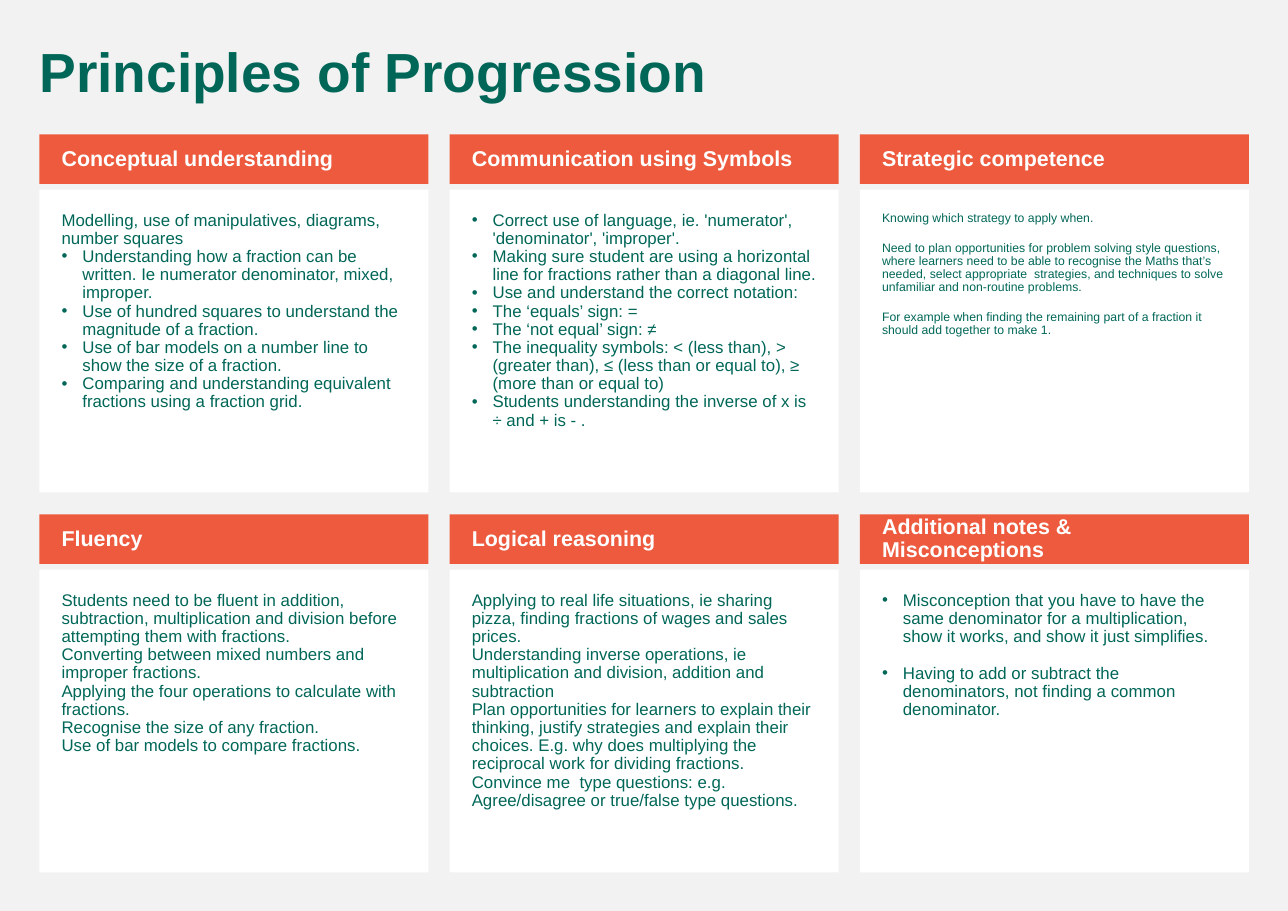
from lxml import etree
from pptx import Presentation
from pptx.dml.color import RGBColor
from pptx.enum.shapes import MSO_SHAPE as Shape
from pptx.enum.text import MSO_ANCHOR as Anchor, PP_ALIGN as Align
from pptx.oxml.ns import qn
from pptx.util import Cm, Pt

GREEN, ORANGE, WHITE, GREY = "006758", "ED5A3E", "FFFFFF", "F2F2F2"
LEFT, TOP = 0.91, 3.1
COLUMN_STEP, ROW_STEP = 9.46, 8.76
PANEL_WIDTH, HEADING_HEIGHT, BODY_HEIGHT, BODY_OFFSET = 8.97, 1.14, 6.98, 1.27
HEADING_INSETS = (0.51, 0.13, 0.25, 0.13)
BODY_INSETS = (0.51, 0.51, 0.51, 0.51)

# A line that starts with "• " becomes a bullet.
PANELS = [
    ("Conceptual understanding", {}, [
        "Modelling, use of manipulatives, diagrams, number squares",
        "• Understanding how a fraction can be written. Ie numerator denominator, mixed, improper.",
        "• Use of hundred squares to understand the magnitude of a fraction.",
        "• Use of bar models on a number line to show the size of a fraction.",
        "• Comparing and understanding equivalent fractions using a fraction grid.",
    ]),
    ("Communication using Symbols", {}, [
        "• Correct use of language, ie. 'numerator', 'denominator', 'improper'.",
        "• Making sure student are using a horizontal line for fractions rather than a diagonal line.",
        "• Use and understand the correct notation:",
        "• The ‘equals’ sign: =",
        "• The ‘not equal’ sign: ≠",
        "• The inequality symbols: < (less than), > (greater than), "
        "≤ (less than or equal to), ≥ (more than or equal to)",
        "• Students understanding the inverse of x is ÷ and + is - .",
    ]),
    ("Strategic competence", {"size": 8, "before": 11}, [
        "Knowing which strategy to apply when.",
        "Need to plan opportunities for problem solving style questions, where learners need "
        "to be able to recognise the Maths that’s needed, select appropriate  strategies, "
        "and techniques to solve unfamiliar and non-routine problems.",
        "For example when finding the remaining part of a fraction it should add together to make 1.",
    ]),
    ("Fluency", {}, [
        "Students need to be fluent in addition, subtraction, multiplication and division "
        "before attempting them with fractions.",
        "Converting between mixed numbers and improper fractions.",
        "Applying the four operations to calculate with fractions.",
        "Recognise the size of any fraction.",
        "Use of bar models to compare fractions.",
    ]),
    ("Logical reasoning", {}, [
        "Applying to real life situations, ie sharing pizza, finding fractions of wages and sales prices.",
        "Understanding inverse operations, ie multiplication and division, addition and subtraction",
        "Plan opportunities for learners to explain their thinking, justify strategies and explain "
        "their choices. E.g. why does multiplying the reciprocal work for dividing fractions.",
        "Convince me  type questions: e.g.",
        "Agree/disagree or true/false type questions.",
    ]),
    ("Additional notes & Misconceptions", {"before": 12}, [
        "• Misconception that you have to have the same denominator for a multiplication, "
        "show it works, and show it just simplifies.",
        "• Having to add or subtract the denominators, not finding a common denominator.",
    ]),
]


def color(value):
    return RGBColor.from_string(value)


def add_bullet(paragraph):
    properties = paragraph._p.get_or_add_pPr()
    properties.set("marL", str(Cm(0.48)))
    properties.set("indent", str(-Cm(0.48)))
    etree.SubElement(properties, qn("a:buFont")).set("typeface", "Arial")
    etree.SubElement(properties, qn("a:buChar")).set("char", "•")


def write_text(frame, lines, size=11, ink=GREEN, bold=False, before=0,
               anchor=Anchor.TOP, insets=(0.25, 0.13, 0.25, 0.13)):
    frame.word_wrap = True
    frame.vertical_anchor = anchor
    frame.margin_left, frame.margin_top, frame.margin_right, frame.margin_bottom = map(Cm, insets)
    for index, line in enumerate(lines):
        paragraph = frame.add_paragraph() if index else frame.paragraphs[0]
        paragraph.alignment = Align.LEFT
        paragraph.line_spacing = 0.9
        paragraph.space_before = Pt(before if index else 0)
        if line.startswith("• "):
            add_bullet(paragraph)
        run = paragraph.add_run()
        run.text = line.removeprefix("• ")
        run.font.name = "Arial"
        run.font.size = Pt(size)
        run.font.bold = bold
        run.font.color.rgb = color(ink)


class ProgressionSlide:
    def __init__(self, presentation):
        self.slide = presentation.slides.add_slide(presentation.slide_layouts[6])
        background = self.slide.background.fill
        background.solid()
        background.fore_color.rgb = color(GREY)

    def title(self, text):
        box = self.slide.shapes.add_textbox(Cm(0.66), Cm(0.91), Cm(28.14), Cm(1.65))
        write_text(box.text_frame, [text], size=36, bold=True)

    def block(self, left, top, height, fill, lines, **text_format):
        shape = self.slide.shapes.add_shape(
            Shape.RECTANGLE, Cm(left), Cm(top), Cm(PANEL_WIDTH), Cm(height))
        shape.shadow.inherit = False
        shape.fill.solid()
        shape.fill.fore_color.rgb = color(fill)
        shape.line.fill.background()
        write_text(shape.text_frame, lines, **text_format)

    def panel(self, left, top, heading, lines, **text_format):
        self.block(left, top + BODY_OFFSET, BODY_HEIGHT, WHITE, lines,
                   insets=BODY_INSETS, **text_format)
        self.block(left, top, HEADING_HEIGHT, ORANGE, [heading], size=14, ink=WHITE,
                   bold=True, anchor=Anchor.MIDDLE, insets=HEADING_INSETS)


def main():
    presentation = Presentation()
    presentation.slide_width, presentation.slide_height = Cm(29.7), Cm(21)
    page = ProgressionSlide(presentation)
    page.title("Principles of Progression")
    for index, (heading, text_format, lines) in enumerate(PANELS):
        row, column = divmod(index, 3)
        page.panel(LEFT + column * COLUMN_STEP, TOP + row * ROW_STEP,
                   heading, lines, **text_format)
    presentation.save("out.pptx")


if __name__ == "__main__":
    main()
